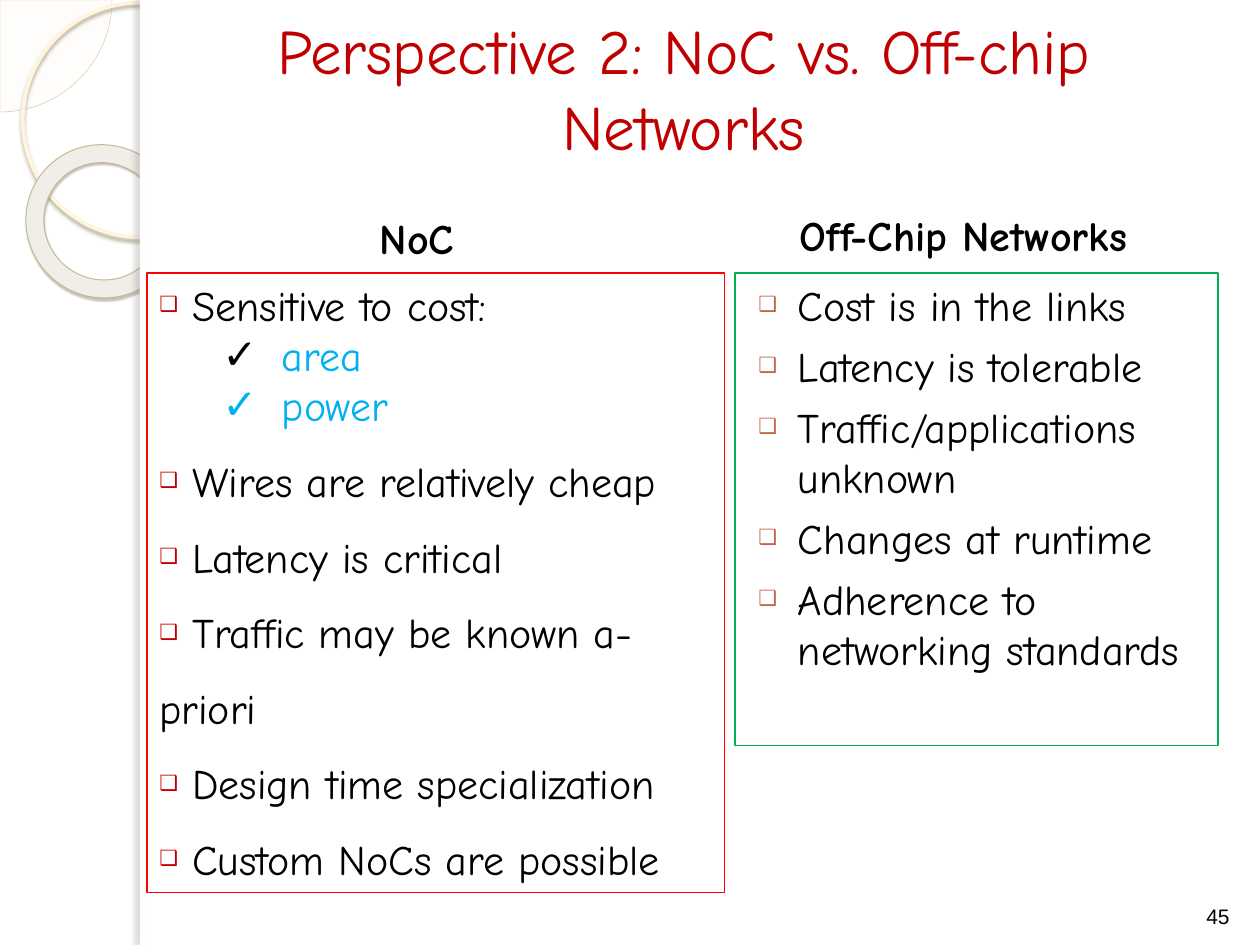
from lxml import etree
from pptx import Presentation
from pptx.dml.color import RGBColor
from pptx.enum.shapes import MSO_SHAPE
from pptx.enum.text import MSO_ANCHOR, MSO_AUTO_SIZE, PP_ALIGN
from pptx.oxml import parse_xml
from pptx.oxml.ns import nsdecls, qn
from pptx.util import Pt

HUES = {
    "white": "FFFFFF", "black": "000000", "title": "C00000", "red": "FF0000",
    "green": "00B050", "blue": "00B0F0", "rust": "C0654C", "cream": "FEFAF4",
    "tan": "D3C39F", "ring": "FFF5DE", "donut": "EFEEE9", "edge": "C7B893",
}
HUE = {name: RGBColor.from_string(code) for name, code in HUES.items()}
FONT = "Comic Neue"

deck = Presentation()
deck.slide_width, deck.slide_height = Pt(720), Pt(540)
slide = deck.slides.add_slide(deck.slide_layouts[5])


def add_box(kind, spot, fill=None, line=None, width=0.75, shade=None):
    """Add a shape; shade is colour, alpha %, blur, distance, angle."""
    box = slide.shapes.add_shape(kind, *[Pt(n) for n in spot])
    box.shadow.inherit = False
    if fill:
        box.fill.solid()
        box.fill.fore_color.rgb = HUE[fill]
    else:
        box.fill.background()
    if line:
        box.line.color.rgb = HUE[line]
        box.line.width = Pt(width)
    else:
        box.line.fill.background()
    if shade:
        tint, alpha, blur, dist, angle = shade
        effects = box._element.spPr.find(qn("a:effectLst"))
        effects.append(parse_xml(
            f'<a:outerShdw {nsdecls("a")} blurRad="{Pt(blur)}" dist="{Pt(dist)}" '
            f'dir="{angle * 60000}" algn="tl" rotWithShape="0"><a:srgbClr val="{tint}">'
            f'<a:alpha val="{alpha * 1000}"/></a:srgbClr></a:outerShdw>'))
    return box


def add_text(para, text, hue="black", size=24, font=FONT, bold=False):
    run = para.add_run()
    run.text = text
    run.font.size, run.font.name, run.font.bold = Pt(size), font, bold
    run.font.color.rgb = HUE[hue]


# Side ornament: quarter disc, ring and donut
pie = add_box(MSO_SHAPE.PIE, (-64, -64, 128, 128), "cream", "tan", 0.25)
pie.adjustments[0], pie.adjustments[1] = 0, 54
tone = pie._element.spPr.find(qn("a:solidFill"))[0]
etree.SubElement(tone, qn("a:alpha"), val="33000")
add_box(MSO_SHAPE.OVAL, (13, 1.5, 134, 134), None, "ring", 2.15,
        ("B0A68F", 85, 2, 2, 90))
donut = add_box(MSO_SHAPE.DONUT, (14.5, 83, 88.5, 87), "donut", "edge", 0.58,
                ("5A5444", 35, 1, 1.2, 75))
donut.adjustments[0] = 0.118
donut.rotation = 38.6

# White page with a shaded left edge
add_box(MSO_SHAPE.RECTANGLE, (80, 0, 640, 540), "white")
add_box(MSO_SHAPE.RECTANGLE, (80, 0, 6, 540), "white",
        shade=("736F63", 25, 3, 3, 180))

# Title, brought in front of the page
title = slide.shapes.title
title.left, title.top, title.width, title.height = Pt(84), Pt(5), Pt(613.5), Pt(90)
slide.shapes._spTree.append(title._element)
frame = title.text_frame
frame.word_wrap, frame.auto_size = True, MSO_AUTO_SIZE.NONE
frame.vertical_anchor = MSO_ANCHOR.MIDDLE
frame.paragraphs[0].alignment = PP_ALIGN.CENTER
add_text(frame.paragraphs[0], "Perspective 2: NoC vs. Off-chip Networks", "title", 36)

# Kinds of item: bullet, size %, margin, indent, space before, line spacing
STYLES = {
    "lead": ("❑", 50, 0, 0, 0, 1),
    "check": ("✓", 100, 70, -34, 0, 1),
    "wide": ("❑", 50, 0, 0, 0, 1.5),
    "right": ("❑", 50, 28.8, -22.5, 6, 1),
}

# Lists: place, outline, items of (style, text, text colour, bullet colour)
near = [("lead", " Sensitive to cost:", "black", "title"),
        ("check", "area", "blue", "black"),
        ("check", "power", "blue", "blue")]
near += [("wide", " " + text, "black", "title") for text in (
    "Wires are relatively cheap", "Latency is critical",
    "Traffic may be known a-priori", "Design time specialization",
    "Custom NoCs are possible")]
far = [("right", text, "black", "rust") for text in (
    "Cost is in the links", "Latency is tolerable",
    "Traffic/applications unknown", "Changes at runtime",
    "Adherence to networking standards")]

for spot, line, items in (((420, 156, 276, 270), "green", far),
                          ((84, 156, 330, 354), "red", near)):
    frame = add_box(MSO_SHAPE.RECTANGLE, spot, None, line).text_frame
    frame.word_wrap = True
    frame.vertical_anchor = MSO_ANCHOR.TOP
    for row, (style, text, hue, mark) in enumerate(items):
        sign, scale, margin, indent, before, space = STYLES[style]
        para = frame.paragraphs[0] if row == 0 else frame.add_paragraph()
        props = para._p.get_or_add_pPr()
        props.set("marL", str(Pt(margin)))
        props.set("indent", str(Pt(indent)))
        tint = etree.SubElement(props, qn("a:buClr"))
        etree.SubElement(tint, qn("a:srgbClr"), val=HUES[mark])
        etree.SubElement(props, qn("a:buSzPct"), val=str(scale * 1000))
        etree.SubElement(props, qn("a:buFont"), typeface="Arial")
        etree.SubElement(props, qn("a:buChar"), char=sign)
        para.alignment = PP_ALIGN.LEFT
        para.line_spacing = space
        para.space_before = Pt(before if row else 0)
        add_text(para, text, hue)

# List headings
for text, spot in (("Off-Chip Networks", (450, 116, 243, 36.5)),
                   ("NoC", (210, 118, 64, 36.5))):
    frame = add_box(MSO_SHAPE.RECTANGLE, spot, "white", "white").text_frame
    frame.word_wrap = False
    frame.vertical_anchor = MSO_ANCHOR.TOP
    frame.paragraphs[0].alignment = PP_ALIGN.LEFT
    add_text(frame.paragraphs[0], text, bold=True)

# Page number
frame = slide.shapes.add_textbox(Pt(678), Pt(497), Pt(36), Pt(37.5)).text_frame
frame.word_wrap = True
frame.vertical_anchor = MSO_ANCHOR.BOTTOM
frame.paragraphs[0].alignment = PP_ALIGN.CENTER
add_text(frame.paragraphs[0], "45", size=12, font="Arial")

deck.save("out.pptx")
